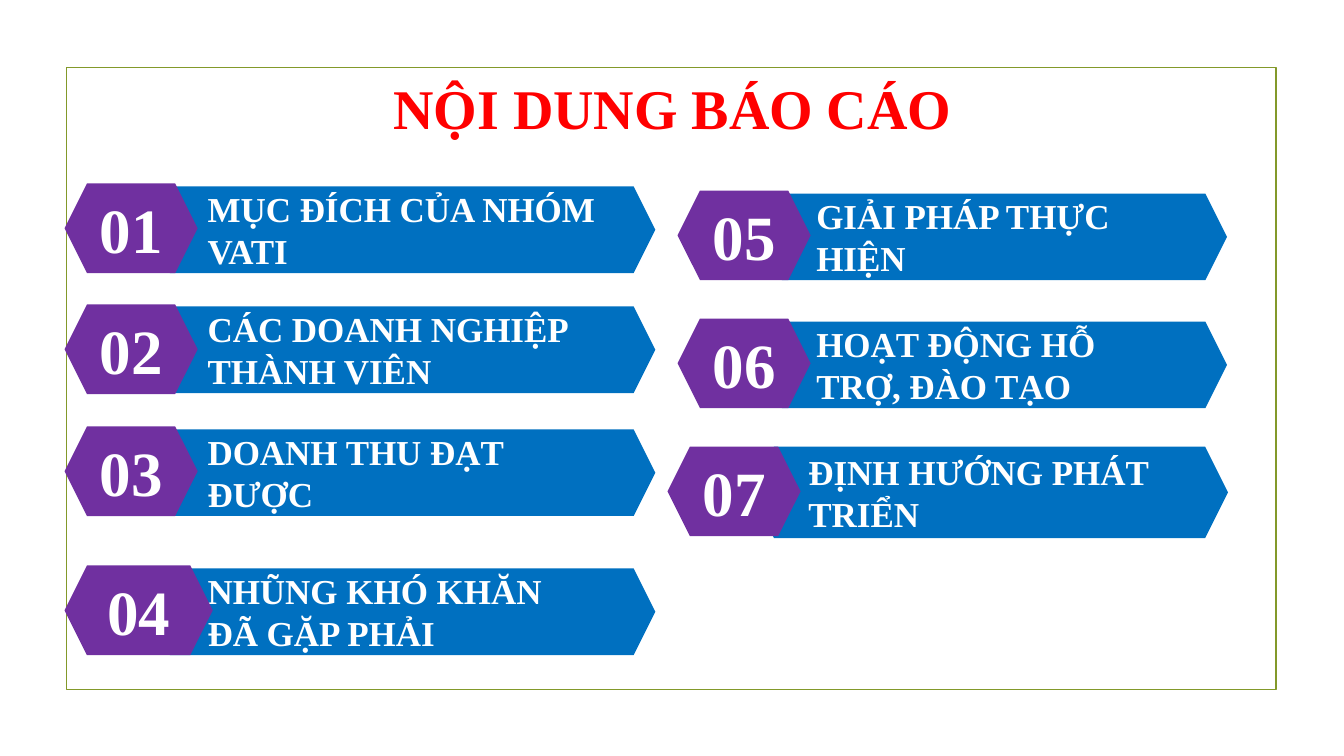
from pptx import Presentation
from pptx import util as u
from pptx.dml.color import RGBColor
from pptx.enum import shapes, text

COLORS = {"frame": "83992A", "title": "FF0000", "bar": "0070C0",
          "badge": "7030A0", "label": "FFFFFF"}
FORMATS = {
    "title": {"name": "Times New Roman", "size": u.Pt(40), "bold": True},
    "bar": {"name": "Times New Roman", "size": u.Pt(25), "bold": True},
    "badge": {"name": "Times New Roman", "size": u.Pt(45), "bold": True},
}
BADGE_HEIGHT = 0.89

# number, label, badge left, top, badge width, bar left, top, width, height
AGENDA = [
    ("01", "MỤC ĐÍCH CỦA NHÓM VATI", 0.64, 1.82, 1.32, 1.47, 1.85, 5.03, 0.86),
    ("02", "CÁC DOANH NGHIỆP THÀNH VIÊN", 0.64, 3.02, 1.32, 1.47, 3.04, 5.03, 0.86),
    ("03", "DOANH THU ĐẠT ĐƯỢC", 0.64, 4.23, 1.32, 1.47, 4.26, 5.03, 0.86),
    ("04", "NHŨNG KHÓ KHĂN ĐÃ GẶP PHẢI", 0.64, 5.61, 1.47, 1.47, 5.64, 5.03, 0.86),
    ("05", "GIẢI PHÁP THỰC HIỆN", 6.72, 1.89, 1.32, 7.54, 1.92, 4.63, 0.86),
    ("06", "HOẠT ĐỘNG HỖ TRỢ, ĐÀO TẠO", 6.72, 3.16, 1.32, 7.54, 3.19, 4.63, 0.86),
    ("07", "ĐỊNH HƯỚNG PHÁT TRIỂN", 6.62, 4.43, 1.32, 7.45, 4.43, 4.73, 0.91),
]


class AgendaSlide:
    def __init__(self, prs):
        self.s = prs.slides.add_slide(prs.slide_layouts[6])

    def set_text(self, sp, words, style, color, align):
        tf = sp.text_frame
        tf.word_wrap = True
        tf.vertical_anchor = text.MSO_ANCHOR.MIDDLE
        p = tf.paragraphs[0]
        p.alignment = align
        r = p.add_run()
        r.text = words
        for key, value in FORMATS[style].items():
            setattr(r.font, key, value)
        r.font.color.rgb = RGBColor.from_string(COLORS[color])

    def frame(self, *box):
        sp = self.s.shapes.add_shape(shapes.MSO_SHAPE.RECTANGLE, *map(u.Inches, box))
        sp.shadow.inherit = False
        sp.fill.background()
        sp.line.color.rgb = RGBColor.from_string(COLORS["frame"])
        sp.line.width = u.Pt(1.25)

    def title(self, words, *box):
        sp = self.s.shapes.add_textbox(*map(u.Inches, box))
        self.set_text(sp, words, "title", "title", text.PP_ALIGN.CENTER)

    def hexagon(self, words, style, align, *box):
        sp = self.s.shapes.add_shape(shapes.MSO_SHAPE.HEXAGON, *map(u.Inches, box))
        sp.shadow.inherit = False
        sp.fill.solid()
        sp.fill.fore_color.rgb = RGBColor.from_string(COLORS[style])
        sp.line.fill.background()
        self.set_text(sp, words, style, "label", align)

    def item(self, number, label, left, top, width, *bar):
        """Draw a label bar with its number badge on top."""
        self.hexagon(label, "bar", text.PP_ALIGN.LEFT, *bar)
        self.hexagon(number, "badge", text.PP_ALIGN.CENTER,
                     left, top, width, BADGE_HEIGHT)


def main():
    prs = Presentation()
    prs.slide_width, prs.slide_height = u.Inches(13.33), u.Inches(7.5)
    slide = AgendaSlide(prs)
    slide.frame(0.66, 0.67, 12, 6.17)
    slide.title("NỘI DUNG BÁO CÁO", 1.42, 0.55, 10.5, 1.02)
    for entry in AGENDA:
        slide.item(*entry)
    prs.save("out.pptx")


if __name__ == "__main__":
    main()
